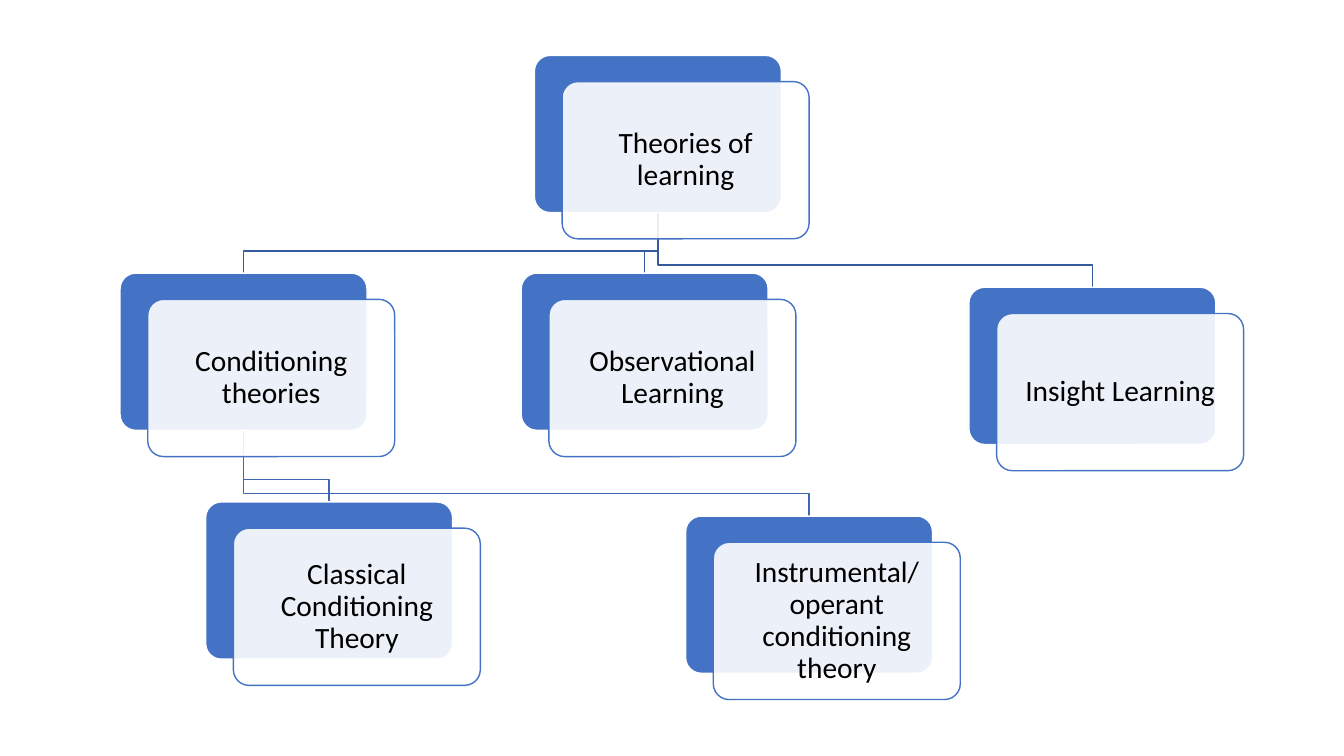
from collections import namedtuple
from dataclasses import dataclass

from lxml.etree import SubElement
from pptx import Presentation
from pptx.dml.color import RGBColor as RGB
from pptx.enum.shapes import MSO_SHAPE as Shape
from pptx.enum.text import MSO_ANCHOR as Anchor, PP_ALIGN as Align
from pptx.oxml.ns import qn
from pptx.util import Inches, Pt


@dataclass(frozen=True)
class Theme:
    blue: RGB = RGB(0x44, 0x72, 0xC4)
    white: RGB = RGB(0xFF, 0xFF, 0xFF)
    black: RGB = RGB(0, 0, 0)
    link_top: RGB = RGB(0x36, 0x5B, 0x9D)
    link_sub: RGB = RGB(0x3E, 0x67, 0xB2)
    font: str = "Calibri"
    size: Pt = Pt(21)
    line: Pt = Pt(1)
    card_alpha: int = 90


T = Theme()
WIDTH, HEIGHT = Inches(13.33), Inches(7.5)

# Lengths are percentages of the slide's width (x) and height (y)
BOX_W, BOX_H = 18.38, 20.8
CARD_DX, CARD_DY = 2.06, 3.47
PAD_X, PAD_Y = 0.34, 0.6
ELBOW_RISE = 2.95

Node = namedtuple("Node", "text x y parent link")
NODES = {
    "root": Node("Theories of learning", 39.76, 7.33, None, None),
    "observe": Node("Observational Learning", 38.78, 36.13, "root", T.link_top),
    "condition": Node("Conditioning theories", 8.93, 36.13, "root", T.link_top),
    "classical": Node("Classical Conditioning Theory", 15.3, 66.4, "condition", T.link_sub),
    "operant": Node("Instrumental/ operant conditioning theory", 51.01, 68.27,
                    "condition", T.link_sub),
    "insight": Node("Insight Learning", 72.09, 38, "root", T.link_top),
}


def px(share):
    return round(WIDTH * share / 100)


def py(share):
    return round(HEIGHT * share / 100)


def set_all(obj, values):
    for name, value in values.items():
        setattr(obj, name, value)


def outline(sp, color):
    sp.shadow.inherit = False
    sp.line.color.rgb = color
    sp.line.width = T.line


def add_link(slide, parent, child):
    """Draw the elbow from the parent's bottom centre to the child's top centre."""
    x1, y1 = px(parent.x + BOX_W / 2), py(parent.y + BOX_H)
    x2, y2 = px(child.x + BOX_W / 2), py(child.y)
    bend = py(child.y - ELBOW_RISE)
    path = slide.shapes.build_freeform(x1, y1)
    path.add_line_segments([(x1, bend), (x2, bend), (x2, y2)], close=False)
    sp = path.convert_to_shape()
    sp.fill.background()
    outline(sp, child.link)


def add_panel(slide, x, y, fill, line, alpha=100):
    sp = slide.shapes.add_shape(Shape.ROUNDED_RECTANGLE, px(x), py(y), px(BOX_W), py(BOX_H))
    sp.adjustments[0] = 0.1
    sp.fill.solid()
    sp.fill.fore_color.rgb = fill
    outline(sp, line)
    if alpha < 100:
        color = sp._element.spPr.find(qn("a:solidFill"))[0]
        SubElement(color, qn("a:alpha"), val=str(alpha * 1000))


def add_label(slide, x, y, text):
    box = slide.shapes.add_textbox(px(x + PAD_X), py(y + PAD_Y),
                                   px(BOX_W - 2 * PAD_X), py(BOX_H - 2 * PAD_Y))
    tf = box.text_frame
    sides = ("left", "top", "right", "bottom")
    set_all(tf, {f"margin_{side}": Inches(0.09) for side in sides})
    set_all(tf, {"word_wrap": True, "vertical_anchor": Anchor.MIDDLE})
    p = tf.paragraphs[0]
    set_all(p, {"alignment": Align.CENTER, "line_spacing": 0.9})
    r = p.add_run()
    r.text = text
    set_all(r.font, {"name": T.font, "size": T.size})
    r.font.color.rgb = T.black


def add_node(slide, node):
    x, y = node.x + CARD_DX, node.y + CARD_DY
    add_panel(slide, node.x, node.y, T.blue, T.white)
    add_panel(slide, x, y, T.white, T.blue, T.card_alpha)
    add_label(slide, x, y, node.text)


def main():
    prs = Presentation()
    set_all(prs, {"slide_width": WIDTH, "slide_height": HEIGHT})
    slide = prs.slides.add_slide(prs.slide_layouts[6])

    # Links lie behind the boxes
    for node in NODES.values():
        if node.parent:
            add_link(slide, NODES[node.parent], node)

    # Boxes of the hierarchy
    for node in NODES.values():
        add_node(slide, node)

    prs.save("out.pptx")


if __name__ == "__main__":
    main()
